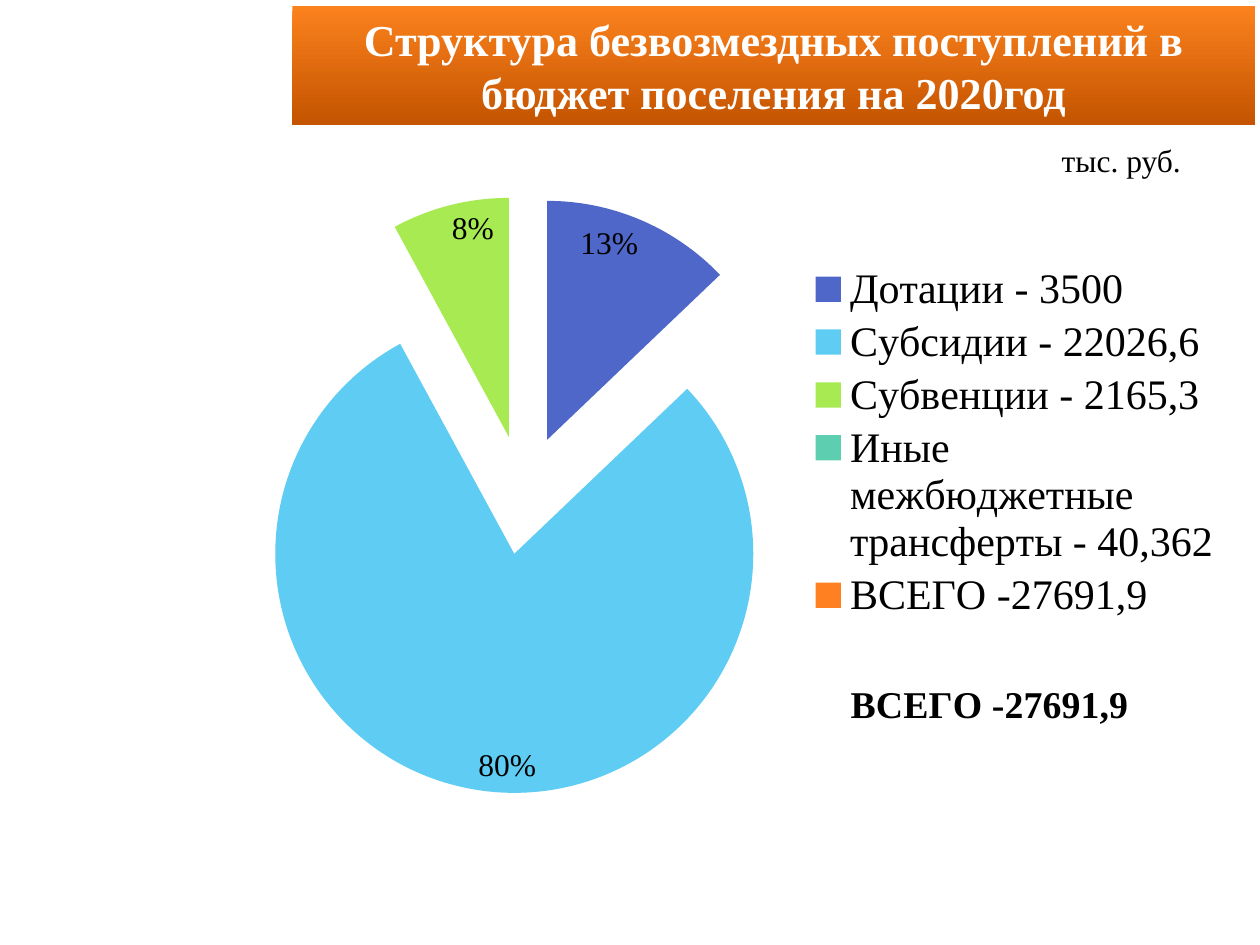
"""Build a slide with a pie of the settlement's grants for 2020."""
import lxml.etree
import pptx
import pptx.chart.data
import pptx.dml.color
import pptx.enum.chart
import pptx.enum.text
import pptx.oxml
import pptx.oxml.ns
import pptx.util

Inches, Pt = pptx.util.Inches, pptx.util.Pt
RGB = pptx.dml.color.RGBColor.from_string
qn = pptx.oxml.ns.qn

THEME = {
    "font": "Times New Roman",
    "text": RGB("000000"),
    "title_text": RGB("FFFFFF"),
    "banner": ["FB811D", "C45400"],
    "slices": ["4E67C8", "5ECCF3", "A7EA52", "5DCEAF", "FF8021"],
    "title_size": Pt(25.2),
    "body_size": Pt(18),
    "legend_size": Pt(24),
    "total_size": Pt(21.6),
}
TOTAL = "ВСЕГО -27691,9"
SHARES = {
    "Дотации - 3500": 13,
    "Субсидии - 22026,6": 80,
    "Субвенции - 2165,3": 8,
    "Иные межбюджетные трансферты - 40,362": None,
    TOTAL: None,
}


def style(target, **values):
    for name, value in values.items():
        setattr(target, name, value)


def place(parent, index, **fractions):
    for old in parent.findall(qn("c:layout")):
        parent.remove(old)
    layout = lxml.etree.Element(qn("c:layout"))
    manual = lxml.etree.SubElement(layout, qn("c:manualLayout"))
    if parent.tag == qn("c:plotArea"):
        lxml.etree.SubElement(manual, qn("c:layoutTarget")).set("val", "inner")
    for axis in "xy":
        lxml.etree.SubElement(manual, qn(f"c:{axis}Mode")).set("val", "edge")
    for name, value in fractions.items():
        lxml.etree.SubElement(manual, qn(f"c:{name}")).set("val", str(value))
    parent.insert(index, layout)


deck = pptx.Presentation()
style(deck, slide_width=Inches(10), slide_height=Inches(7.5))
page = deck.slides.add_slide(deck.slide_layouts[5])

title = page.shapes.title
style(title, left=Inches(2.32), top=Inches(0.05), width=Inches(7.64), height=Inches(0.94))
title.fill.gradient()
title.fill.gradient_angle = 270
for stop, color, position in zip(title.fill.gradient_stops, THEME["banner"], (0, 1)):
    stop.color.rgb = RGB(color)
    stop.position = position

unit = page.shapes.add_textbox(Inches(8.15), Inches(1.07), Inches(1.5), Inches(0.4))
headings = [
    (title, "Структура безвозмездных поступлений в бюджет поселения на 2020год",
     THEME["title_size"], THEME["title_text"], True, pptx.enum.text.MSO_AUTO_SIZE.NONE),
    (unit, "тыс. руб.", THEME["body_size"], THEME["text"], False,
     pptx.enum.text.MSO_AUTO_SIZE.SHAPE_TO_FIT_TEXT),
]
for box, text, size, color, bold, fit in headings:
    style(box.text_frame, word_wrap=True, auto_size=fit)
    para = box.text_frame.paragraphs[0]
    para.alignment = pptx.enum.text.PP_ALIGN.CENTER
    span = para.add_run()
    span.text = text
    style(span.font, name=THEME["font"], size=size, bold=bold)
    span.font.color.rgb = color

data = pptx.chart.data.CategoryChartData()
data.categories = list(SHARES)
data.add_series(TOTAL, list(SHARES.values()))
chart = page.shapes.add_chart(
    pptx.enum.chart.XL_CHART_TYPE.PIE,
    Inches(1.53), Inches(0.52), Inches(8.47), Inches(6.43), data,
).chart
style(chart.font, name=THEME["font"], size=THEME["body_size"])
chart.font.color.rgb = THEME["text"]
space = chart.element
backdrop = lxml.etree.Element(qn("c:spPr"))
lxml.etree.SubElement(backdrop, qn("a:noFill"))
outline = lxml.etree.SubElement(backdrop, qn("a:ln"))
lxml.etree.SubElement(outline, qn("a:noFill"))
space.find(qn("c:txPr")).addprevious(backdrop)

chart.has_title = True
chart.chart_title.text_frame.text = TOTAL
total_font = chart.chart_title.text_frame.paragraphs[0].runs[0].font
style(total_font, name=THEME["font"], size=THEME["total_size"], bold=True)
total_font.color.rgb = THEME["text"]

chart.has_legend = True
style(chart.legend, position=pptx.enum.chart.XL_LEGEND_POSITION.RIGHT, include_in_layout=False)
style(chart.legend.font, name=THEME["font"], size=THEME["legend_size"])
chart.legend.font.color.rgb = THEME["text"]

place(space.find(".//" + qn("c:plotArea")), 0, x=0.03, y=0.15, w=0.56, h=0.76)
place(space.find(".//" + qn("c:title")), 1, x=0.61, y=0.75)
place(space.find(".//" + qn("c:legend")), 1, x=0.57, y=0.24, w=0.4, h=0.45)

plot = chart.plots[0]
plot.vary_by_categories = True
series = plot.series[0]
explosion = lxml.etree.Element(qn("c:explosion"))
explosion.set("val", "25")
space.find(".//" + qn("c:ser")).find(qn("c:tx")).addnext(explosion)
for index, color in enumerate(THEME["slices"]):
    point_fill = series.points[index].format.fill
    point_fill.solid()
    point_fill.fore_color.rgb = RGB(color)

plot.has_data_labels = True
style(
    plot.data_labels,
    show_value=True,
    show_percentage=False,
    number_format='0"%"',
    number_format_is_linked=False,
    position=pptx.enum.chart.XL_LABEL_POSITION.INSIDE_END,
)

deck.save("out.pptx")
